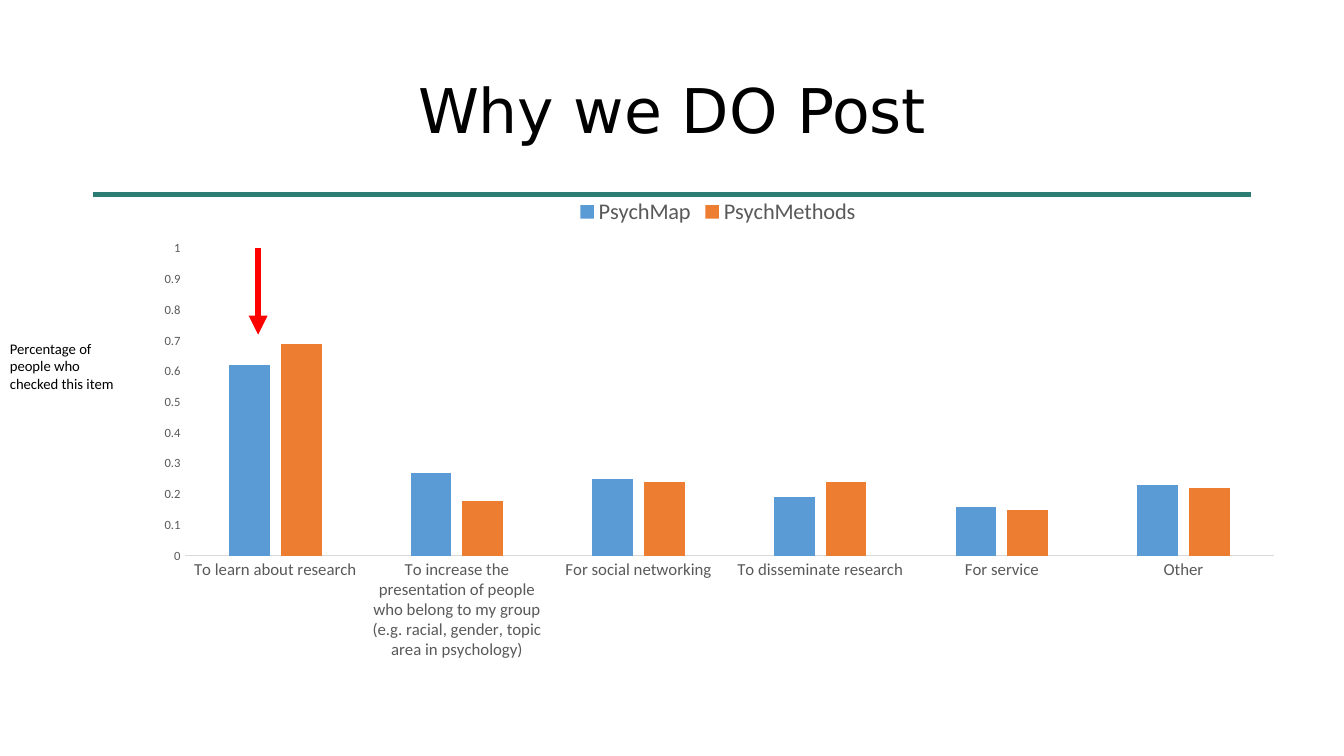
from lxml import etree
from pptx import Presentation
from pptx.chart.data import CategoryChartData
from pptx.dml.color import RGBColor
from pptx.enum.chart import XL_CHART_TYPE as CT, XL_LEGEND_POSITION as LP, XL_TICK_MARK as TM
from pptx.enum.shapes import MSO_CONNECTOR as MC
from pptx.enum.text import MSO_ANCHOR as MA, PP_ALIGN as PA
from pptx.oxml import parse_xml
from pptx.oxml.ns import nsdecls, qn
from pptx.util import Pt

PX = 9144  # 100 px to the inch
COLORS = {"text": "000000", "rule": "2C7C74", "arrow": "FF0000", "label": "595959",
          "axis": "D9D9D9", "map": "5B9BD5", "methods": "ED7D31"}
REASONS = [
    "To learn about research",
    "To increase the presentation of people who belong to my group "
    "(e.g. racial, gender, topic area in psychology)",
    "For social networking",
    "To disseminate research",
    "For service",
    "Other",
]
GROUPS = [
    ("PsychMap", "map", (0.62, 0.27, 0.25, 0.19, 0.16, 0.23)),
    ("PsychMethods", "methods", (0.69, 0.18, 0.24, 0.24, 0.15, 0.22)),
]
PLOT_BOX = {"x": 0.04, "y": 0.13, "w": 0.94, "h": 0.64}


def px(*lengths):
    return [n * PX for n in lengths]


def rgb(name):
    return RGBColor.from_string(COLORS[name])


def style_font(font, size, color, name="Calibri"):
    font.size, font.name = Pt(size), name
    font.color.rgb = rgb(color)


def add_text(s, box, text, size, font="Calibri", align=PA.LEFT, anchor=MA.TOP, spacing=1.0):
    tf = s.shapes.add_textbox(*px(*box)).text_frame
    tf.word_wrap = True
    tf.vertical_anchor = anchor
    p = tf.paragraphs[0]
    p.alignment, p.line_spacing = align, spacing
    r = p.add_run()
    r.text = text
    style_font(r.font, size, "text", font)


def add_line(s, ends, color, width, arrow=False):
    c = s.shapes.add_connector(MC.STRAIGHT, *px(*ends))
    c.line.color.rgb = rgb(color)
    c.line.width = Pt(width)
    if arrow:
        etree.SubElement(c.line._get_or_add_ln(), qn("a:tailEnd"), type="triangle")
    etree.SubElement(c._element.spPr, qn("a:effectLst"))


def place_plot(chart):
    area = chart._chartSpace.chart.plotArea
    for old in area.findall(qn("c:layout")):
        area.remove(old)
    sizes = "".join(f'<c:{k} val="{v}"/>' for k, v in PLOT_BOX.items())
    area.insert(0, parse_xml(
        f'<c:layout {nsdecls("c")}><c:manualLayout><c:layoutTarget val="inner"/>'
        f'<c:xMode val="edge"/><c:yMode val="edge"/>{sizes}</c:manualLayout></c:layout>'))


def style_axis(axis, size):
    axis.major_tick_mark = axis.minor_tick_mark = TM.NONE
    axis.has_major_gridlines = False
    style_font(axis.tick_labels.font, size, "label")


def add_reason_chart(s, box):
    data = CategoryChartData()
    data.categories = REASONS
    for name, _, values in GROUPS:
        data.add_series(name, values)
    chart = s.shapes.add_chart(CT.COLUMN_CLUSTERED, *px(*box), data).chart
    style_font(chart.font, 10, "text")
    chart.has_title = False

    # Bars
    plot = chart.plots[0]
    plot.gap_width, plot.overlap = 219, -27
    plot.vary_by_categories = False
    for series, (_, color, _) in zip(plot.series, GROUPS):
        series.format.fill.solid()
        series.format.fill.fore_color.rgb = rgb(color)

    # Axes
    cat, val = chart.category_axis, chart.value_axis
    style_axis(cat, 12)
    cat.format.line.color.rgb = rgb("axis")
    cat.format.line.width = Pt(0.75)
    style_axis(val, 9)
    val.format.line.fill.background()
    val.minimum_scale, val.maximum_scale, val.major_unit = 0, 1, 0.1

    # Legend
    chart.has_legend = True
    chart.legend.position = LP.TOP
    chart.legend.include_in_layout = False
    style_font(chart.legend.font, 16, "label")
    place_plot(chart)


def main():
    prs = Presentation()
    prs.slide_width, prs.slide_height = px(1333, 750)
    s = prs.slides.add_slide(prs.slide_layouts[6])

    # Heading
    add_line(s, (92, 193, 1241, 193), "rule", 3)
    add_text(s, (92, 40, 1150, 145), "Why we DO Post", 44, "DejaVu Sans",
             PA.CENTER, MA.MIDDLE, 0.9)

    # Chart with its arrow and axis caption
    add_reason_chart(s, (137, 185, 1150, 476))
    add_line(s, (256, 246, 256, 332), "arrow", 4.5, arrow=True)
    add_text(s, (0, 332, 137, 63), "Percentage of people who checked this item", 10.5)

    prs.save("out.pptx")


if __name__ == "__main__":
    main()
